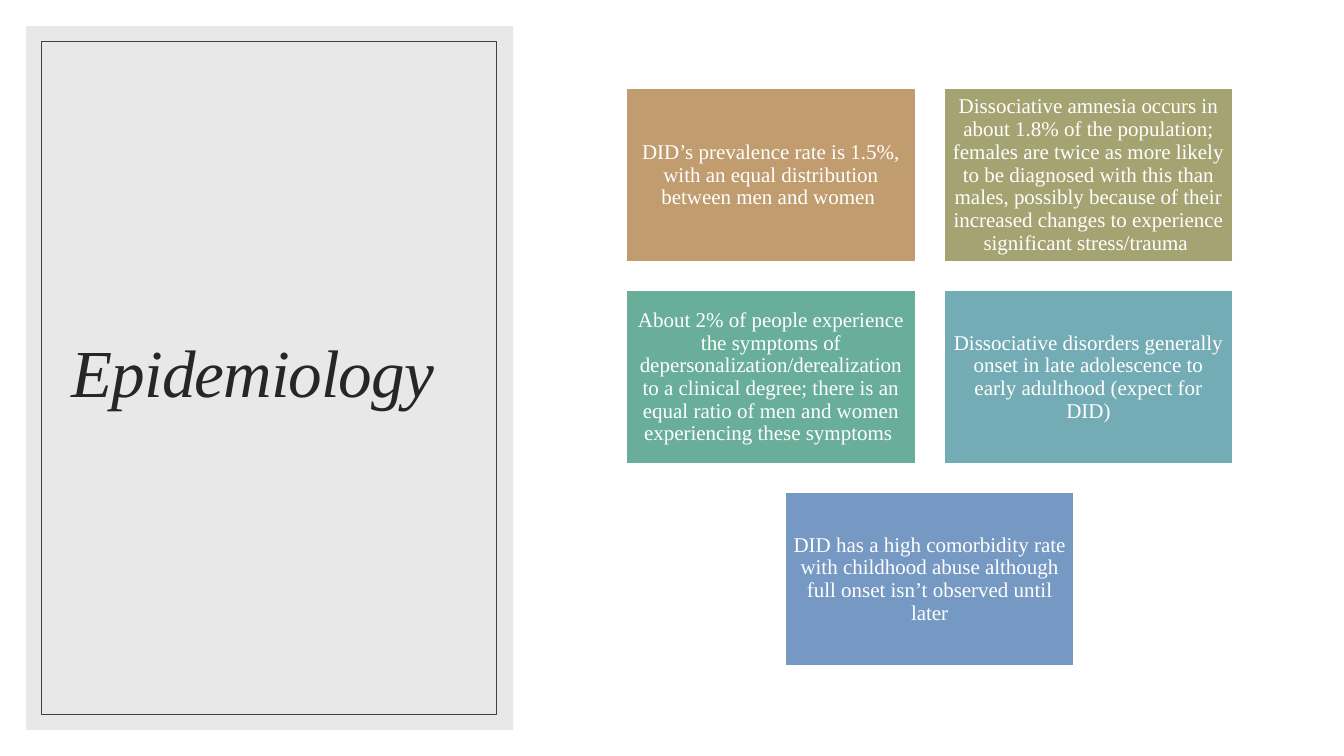
import pptx
import pptx.dml.color
import pptx.enum.shapes
import pptx.enum.text
import pptx.oxml
import pptx.oxml.ns
import pptx.util

Pt = pptx.util.Pt

COLOURS = {
    "panel": "D9D9D9", "frame": "404040", "title": "262626", "white": "FFFFFF",
    "tan": "C09C6E", "olive": "A5A372", "green": "68AE99", "teal": "73ACB4", "blue": "7599C3",
}
CARD_ROWS = [
    [("tan", "DID’s prevalence rate is 1.5%, with an equal distribution between men and women "),
     ("olive", "Dissociative amnesia occurs in about 1.8% of the population; females are twice as "
               "more likely to be diagnosed with this than males, possibly because of their "
               "increased changes to experience significant stress/trauma ")],
    [("green", "About 2% of people experience the symptoms of depersonalization/derealization to a "
               "clinical degree; there is an equal ratio of men and women experiencing these symptoms "),
     ("teal", "Dissociative disorders generally onset in late adolescence to early adulthood "
              "(expect for DID)")],
    [("blue", "DID has a high comorbidity rate with childhood abuse although full onset isn’t "
              "observed until later")],
]
GRID_CENTER, GRID_TOP = 664.1, 63.3
CARD_WIDTH = 206.2
CARD_HEIGHT = CARD_WIDTH * 0.6
CARD_GAP = CARD_WIDTH * 0.1


def colour(name):
    return pptx.dml.color.RGBColor.from_string(COLOURS[name])


def write(frame, text, size=15, ink="white", italic=False, tracking=None, insets=(4.5,) * 4):
    frame.word_wrap = True
    frame.auto_size = pptx.enum.text.MSO_AUTO_SIZE.NONE
    frame.vertical_anchor = pptx.enum.text.MSO_ANCHOR.MIDDLE
    frame.margin_left, frame.margin_top, frame.margin_right, frame.margin_bottom = map(Pt, insets)
    para = frame.paragraphs[0]
    para.alignment = pptx.enum.text.PP_ALIGN.CENTER
    para.line_spacing = 0.9
    span = para.add_run()
    span.text = text
    span.font.name = "Times New Roman"
    span.font.size = Pt(size)
    span.font.italic = italic
    span.font.color.rgb = colour(ink)
    if tracking is not None:
        span.font._element.set("spc", str(round(tracking * 100)))


class SlideBuilder:
    """Hold the current slide and draw its elements in one style."""

    def __init__(self, page):
        self.page = page

    def box(self, left, top, width, height, fill=None, line=None, weight=1, opacity=None):
        box = self.page.shapes.add_shape(
            pptx.enum.shapes.MSO_SHAPE.RECTANGLE, Pt(left), Pt(top), Pt(width), Pt(height))
        box.shadow.inherit = False
        if fill:
            box.fill.solid()
            box.fill.fore_color.rgb = colour(fill)
        else:
            box.fill.background()
        if line:
            box.line.color.rgb = colour(line)
            box.line.width = Pt(weight)
        else:
            box.line.fill.background()
        if opacity is not None:
            shade = box.element.spPr.find(".//" + pptx.oxml.ns.qn("a:srgbClr"))
            alpha = pptx.oxml.parse_xml(f'<a:alpha {pptx.oxml.ns.nsdecls("a")} val="{opacity * 1000}"/>')
            shade.append(alpha)
        return box

    def title(self, text, left, top, width, height):
        title = self.page.shapes.title
        title.left, title.top, title.width, title.height = map(Pt, (left, top, width, height))
        write(title.text_frame, text, size=48, ink="title", italic=True, tracking=-0.7,
              insets=(0, 3.6, 26, 3.6))
        title.element.getparent().append(title.element)

    def card(self, text, fill, left, top):
        card = self.box(left, top, CARD_WIDTH, CARD_HEIGHT, fill=fill, line="white")
        write(card.text_frame, text)


def main():
    deck = pptx.Presentation()
    deck.slide_width, deck.slide_height = Pt(960), Pt(540)
    slide = SlideBuilder(deck.slides.add_slide(deck.slide_layouts[5]))

    slide.box(18.7, 18.7, 347.8, 502.6, fill="panel", opacity=60)
    slide.title("Epidemiology", 45.4, 43.9, 296.6, 449.3)
    slide.box(29.5, 29.5, 324.7, 481, line="frame", weight=0.5)

    for row, cards in enumerate(CARD_ROWS):
        row_width = len(cards) * (CARD_WIDTH + CARD_GAP) - CARD_GAP
        top = GRID_TOP + row * (CARD_HEIGHT + CARD_GAP)
        for column, (fill, text) in enumerate(cards):
            left = GRID_CENTER - row_width / 2 + column * (CARD_WIDTH + CARD_GAP)
            slide.card(text, fill, left, top)

    deck.save("out.pptx")


if __name__ == "__main__":
    main()
